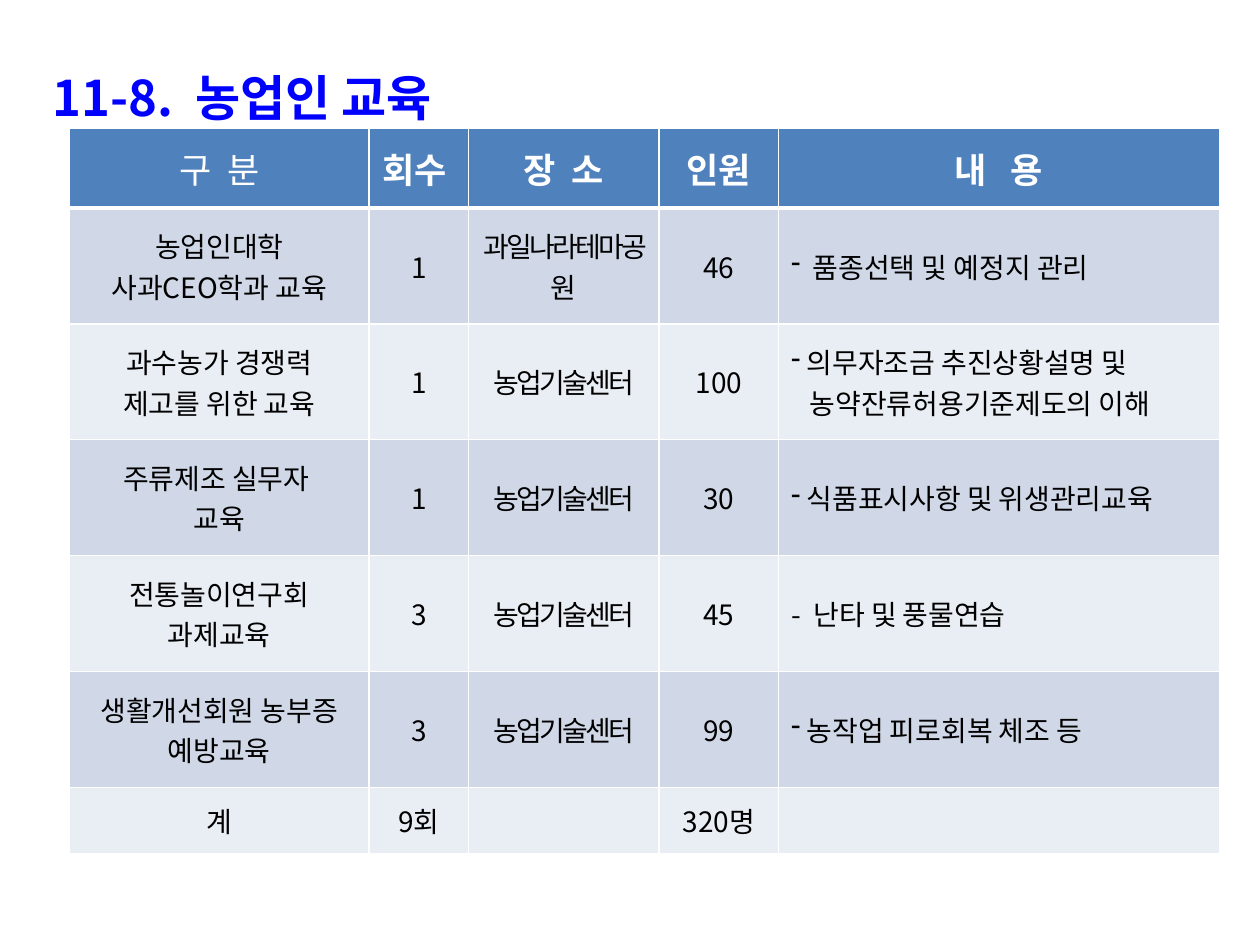
import lxml.etree
import pptx
import pptx.dml.color
import pptx.enum.text
import pptx.oxml.ns
import pptx.util

Inches = pptx.util.Inches
Pt = pptx.util.Pt
RGBColor = pptx.dml.color.RGBColor
PP_ALIGN = pptx.enum.text.PP_ALIGN
MSO_ANCHOR = pptx.enum.text.MSO_ANCHOR
qn = pptx.oxml.ns.qn

BLUE = RGBColor(0x00, 0x00, 0xFF)
WHITE = RGBColor(0xFF, 0xFF, 0xFF)
BLACK = RGBColor(0x00, 0x00, 0x00)
HEADER_FILL = RGBColor(0x4F, 0x81, 0xBD)
BAND_FILLS = (RGBColor(0xD0, 0xD8, 0xE8), RGBColor(0xE9, 0xED, 0xF4))

FONT = "Noto Sans CJK KR"
COLUMN_WIDTHS = (2.38, 0.79, 1.51, 0.95, 3.5)
ROW_HEIGHTS = (0.63,) + (0.92,) * 5 + (0.53,)
PLACE_COLUMN, CONTENT_COLUMN = 2, 4

HEADERS = ("구  분", "회수  ", "장  소", "인원", "내   용")
CENTER = "농업기술센터"
# A content line that starts with "•" carries a dash bullet.
ROWS = (
    ("농업인대학\n사과CEO학과 교육", "1", "과일나라테마공원", "46",
     "•  품종선택 및 예정지 관리"),
    ("과수농가 경쟁력\n제고를 위한 교육", "1", CENTER, "100",
     "• 의무자조금 추진상황설명 및\n   농약잔류허용기준제도의 이해"),
    ("주류제조 실무자 \n교육", "1", CENTER, "30", "• 식품표시사항 및 위생관리교육"),
    ("전통놀이연구회 과제교육", "3", CENTER, "45", "-  난타 및 풍물연습"),
    ("생활개선회원 농부증 예방교육", "3", CENTER, "99", "• 농작업 피로회복 체조 등"),
    ("계", "9회", "", "320명", ""),
)


def write_text(frame, text, size=16, color=BLACK, bold=False,
               align=PP_ALIGN.LEFT, spacing=0, line_spacing=None):
    for index, line in enumerate(text.split("\n")):
        paragraph = frame.paragraphs[0] if index == 0 else frame.add_paragraph()
        paragraph.alignment = align
        if line_spacing:
            paragraph.line_spacing = line_spacing
        if line.startswith("•"):
            add_dash_bullet(paragraph)
            line = line[1:]
        run = paragraph.add_run()
        run.text = line
        font = run.font
        font.size, font.bold, font.name = Pt(size), bold, FONT
        font.color.rgb = color
        properties = run._r.get_or_add_rPr()
        if spacing:
            properties.set("spc", str(int(spacing * 100)))
        for script in ("a:ea", "a:cs"):
            lxml.etree.SubElement(properties, qn(script), typeface=FONT)


def add_dash_bullet(paragraph):
    properties = paragraph._p.get_or_add_pPr()
    properties.set("marL", "0")
    properties.set("indent", "0")
    lxml.etree.SubElement(properties, qn("a:buFontTx"))
    lxml.etree.SubElement(properties, qn("a:buChar"), char="-")


def set_borders(cell, top=1, bottom=1):
    properties = cell._tc.get_or_add_tcPr()
    sides = (("a:lnL", 1), ("a:lnR", 1), ("a:lnT", top), ("a:lnB", bottom))
    for index, (tag, width) in enumerate(sides):
        line = properties.makeelement(qn(tag), {"w": str(int(Pt(width)))})
        fill = lxml.etree.SubElement(line, qn("a:solidFill"))
        lxml.etree.SubElement(fill, qn("a:srgbClr"), val=str(WHITE))
        properties.insert(index, line)


class SlideBuilder:
    def __init__(self, presentation):
        self.slide = presentation.slides.add_slide(presentation.slide_layouts[5])

    def add_title(self, text, left, top, width, height):
        title = self.slide.shapes.title
        title.left, title.top = Inches(left), Inches(top)
        title.width, title.height = Inches(width), Inches(height)
        frame = title.text_frame
        frame.word_wrap = False
        frame.auto_size = pptx.enum.text.MSO_AUTO_SIZE.NONE
        frame.vertical_anchor = MSO_ANCHOR.TOP
        write_text(frame, text, size=28, color=BLUE, bold=True, line_spacing=1.2)

    def add_table(self, left, top):
        table = self.slide.shapes.add_table(
            len(ROW_HEIGHTS), len(COLUMN_WIDTHS), Inches(left), Inches(top),
            Inches(sum(COLUMN_WIDTHS)), Inches(sum(ROW_HEIGHTS))).table
        for column, width in zip(table.columns, COLUMN_WIDTHS):
            column.width = Inches(width)
        for row, height in zip(table.rows, ROW_HEIGHTS):
            row.height = Inches(height)
        for column, text in enumerate(HEADERS):
            self.fill_cell(table.cell(0, column), text, HEADER_FILL, bottom=3,
                           size=20, color=WHITE, bold=column > 0,
                           align=PP_ALIGN.CENTER)
        for row, texts in enumerate(ROWS, start=1):
            for column, text in enumerate(texts):
                self.fill_cell(
                    table.cell(row, column), text, BAND_FILLS[(row - 1) % 2],
                    top=3 if row == 1 else 1,
                    align=PP_ALIGN.LEFT if column == CONTENT_COLUMN else PP_ALIGN.CENTER,
                    spacing=-1.5 if column == PLACE_COLUMN else 0)

    def fill_cell(self, cell, text, fill, top=1, bottom=1, **text_format):
        cell.fill.solid()
        cell.fill.fore_color.rgb = fill
        cell.vertical_anchor = MSO_ANCHOR.MIDDLE
        set_borders(cell, top, bottom)
        if text:
            write_text(cell.text_frame, text, **text_format)


def main():
    presentation = pptx.Presentation()
    presentation.slide_width, presentation.slide_height = Inches(10), Inches(7.5)
    builder = SlideBuilder(presentation)
    builder.add_title("11-8.  농업인 교육", 0.32, 0.39, 9.45, 0.65)
    builder.add_table(0.55, 1.02)
    presentation.save("out.pptx")


if __name__ == "__main__":
    main()
